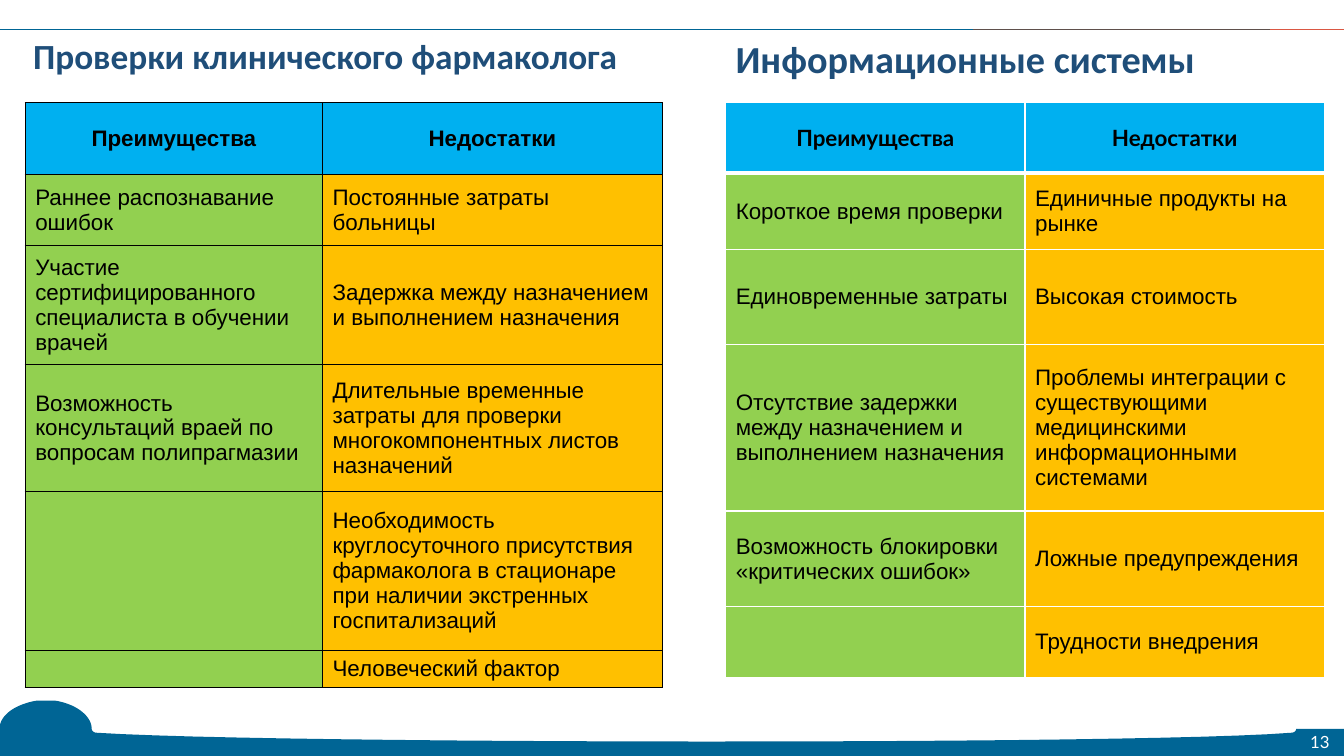
from dataclasses import dataclass

import pptx
import pptx.dml.color
import pptx.enum.shapes
import pptx.enum.text
import pptx.oxml.ns
import pptx.util
from lxml import etree

Pt = pptx.util.Pt
ALIGN = pptx.enum.text.PP_ALIGN
MIDDLE = pptx.enum.text.MSO_ANCHOR.MIDDLE
qn = pptx.oxml.ns.qn


@dataclass(frozen=True)
class Theme:
    """Colours, fonts and type sizes of the slide."""
    wave: str = "006595"
    rule_brown: str = "5F504C"
    rule_red: str = "DA5743"
    title: str = "1F4E79"
    header: str = "00B0F0"
    benefit: str = "92D050"
    drawback: str = "FFC000"
    black: str = "000000"
    white: str = "FFFFFF"
    title_font: str = "Calibri"
    body_font: str = "Arial"
    accent_font: str = "Lato"
    left_title_size: float = 25.2
    right_title_size: float = 27.3
    cell_size: float = 16
    number_size: float = 12


THEME = Theme()
PAGE_WIDTH, PAGE_HEIGHT = 960, 540
RULE_TOP = 21
TABLE_TOP = 73.4

PHARMACOLOGIST_ROWS = [
    (51.1, "Преимущества", "Недостатки"),
    (51.1, "Раннее распознавание ошибок", "Постоянные затраты больницы"),
    (85, "Участие сертифицированного специалиста в обучении врачей",
     "Задержка между назначением и выполнением назначения"),
    (90.7, "Возможность консультаций враей по вопросам полипрагмазии",
     "Длительные временные затраты для проверки многокомпонентных листов назначений"),
    (113.2, "", "Необходимость круглосуточного присутствия фармаколога в стационаре "
     "при наличии экстренных госпитализаций"),
    (25.2, "", "Человеческий фактор"),
]
SYSTEM_ROWS = [
    (50.4, "Преимущества", "Недостатки"),
    (54.7, "Короткое время проверки", "Единичные продукты на рынке"),
    (67.7, "Единовременные затраты", "Высокая стоимость"),
    (118.8, "Отсутствие задержки между назначением и выполнением назначения",
     "Проблемы интеграции с существующими медицинскими информационными системами"),
    (68.4, "Возможность блокировки «критических ошибок»", "Ложные предупреждения"),
    (50.4, "", "Трудности внедрения"),
]


def rgb(code):
    """Turn a hex code into a colour."""
    return pptx.dml.color.RGBColor.from_string(code)


def style_font(para, name, size, color, bold=False):
    """Set the font of a whole paragraph."""
    font = para.font
    font.name, font.size, font.bold = name, Pt(size), bold
    font.color.rgb = rgb(color)


def add_text(page, text, area, font, size, color, bold=False):
    """Add a one-line text box and return it."""
    box = page.shapes.add_textbox(*map(Pt, area))
    frame = box.text_frame
    frame.word_wrap, frame.vertical_anchor = True, MIDDLE
    frame.text = text
    style_font(frame.paragraphs[0], font, size, color, bold)
    return box


def add_title(page, text, left, top, size):
    """Add the heading of one half of the slide."""
    box = add_text(page, text, (left, top, 446.4, 38.2), THEME.title_font, size, THEME.title, True)
    box.text_frame.paragraphs[0].line_spacing = 0.9


def add_page_number(page, number):
    """Add the page number in the lower right corner."""
    box = add_text(page, number, (930.2, 520.6, 25.2, 18.7),
                   THEME.accent_font, THEME.number_size, THEME.white)
    frame = box.text_frame
    frame.margin_left = frame.margin_right = frame.margin_top = frame.margin_bottom = 0
    frame.paragraphs[0].alignment = ALIGN.CENTER


def add_rule(page, start, end, color):
    """Add one stretch of the line along the top."""
    rule = page.shapes.add_connector(pptx.enum.shapes.MSO_CONNECTOR.STRAIGHT,
                                     Pt(start), Pt(RULE_TOP), Pt(end), Pt(RULE_TOP))
    rule.line.color.rgb = rgb(color)
    rule.line.width = Pt(1)
    etree.SubElement(rule._element.spPr, qn("a:effectLst"))


def curve(start, first, second, end, steps=24):
    """Sample a cubic curve after its start point."""
    points = []
    for step in range(1, steps + 1):
        t = step / steps
        weights = ((1 - t) ** 3, 3 * t * (1 - t) ** 2, 3 * t * t * (1 - t), t ** 3)
        points.append(tuple(sum(weight * point[axis] for weight, point
                                in zip(weights, (start, first, second, end))) for axis in (0, 1)))
    return points


def add_wave(page):
    """Add the blue wave along the bottom edge."""
    points = [(38.9, 500.4)]
    for bend in (
        ((54, 502.6), (65.5, 511.2), (65.5, 520.6)),
        ((65.5, 522), (67, 523.4), (69.1, 523.4)),
        ((193, 531.4), (811.4, 532.1), (922.3, 523.4)),
        ((924.5, 523.4), (925.9, 522), (925.9, 520.6)),
    ):
        points += curve(points[-1], *bend)
    points += [(PAGE_WIDTH, 520.6), (PAGE_WIDTH, PAGE_HEIGHT), (0, PAGE_HEIGHT), (0, 517.7)]
    points += curve(points[-1], (2.2, 509), (13, 502.6), (26.6, 500.4))
    outline = [(Pt(x), Pt(y)) for x, y in points]
    builder = page.shapes.build_freeform(*outline[0], scale=1.0)
    builder.add_line_segments(outline[1:], close=True)
    wave = builder.convert_to_shape()
    wave.shadow.inherit = False
    wave.fill.solid()
    wave.fill.fore_color.rgb = rgb(THEME.wave)
    wave.line.fill.background()


def set_borders(cell, color, widths):
    """Draw the left, right, top and bottom borders of a cell."""
    properties = cell._tc.get_or_add_tcPr()
    for index, (side, width) in enumerate(zip("LRTB", widths)):
        line = etree.Element(qn(f"a:ln{side}"), w=str(Pt(width)))
        fill = etree.SubElement(line, qn("a:solidFill"))
        etree.SubElement(fill, qn("a:srgbClr"), val=color)
        properties.insert(index, line)


def fill_cell(cell, text, color, font, is_header):
    """Write and colour one table cell."""
    cell.fill.solid()
    cell.fill.fore_color.rgb = rgb(color)
    cell.vertical_anchor = MIDDLE
    para = cell.text_frame.paragraphs[0]
    if text:
        para.add_run().text = text
    para.alignment = ALIGN.CENTER if is_header else ALIGN.LEFT
    style_font(para, font, THEME.cell_size, THEME.black, is_header)
    if not text:
        etree.SubElement(para._p, qn("a:endParaRPr"), sz=str(int(THEME.cell_size * 100)))


def add_comparison(page, left, widths, rows, border, header_font, header_rule):
    """Add a table of benefits and drawbacks."""
    heights = [row[0] for row in rows]
    table = page.shapes.add_table(len(rows), len(widths), Pt(left), Pt(TABLE_TOP),
                                  Pt(sum(widths)), Pt(sum(heights))).table
    table.first_row = table.horz_banding = False
    for column, width in zip(table.columns, widths):
        column.width = Pt(width)
    for index, (height, *texts) in enumerate(rows):
        table.rows[index].height = Pt(height)
        is_header = index == 0
        colors = (THEME.header,) * 2 if is_header else (THEME.benefit, THEME.drawback)
        font = header_font if is_header else THEME.body_font
        top = header_rule if index == 1 else 1
        bottom = header_rule if is_header else 1
        for place, (text, color) in enumerate(zip(texts, colors)):
            cell = table.cell(index, place)
            fill_cell(cell, text, color, font, is_header)
            set_borders(cell, border, (1, 1, top, bottom))


def main():
    """Build the slide and save it."""
    deck = pptx.Presentation()
    deck.slide_width, deck.slide_height = Pt(PAGE_WIDTH), Pt(PAGE_HEIGHT)
    page = deck.slides.add_slide(deck.slide_layouts[6])
    add_wave(page)
    add_rule(page, 0, 694.8, THEME.wave)
    add_rule(page, 694.8, 907.2, THEME.rule_brown)
    add_rule(page, 907.2, PAGE_WIDTH, THEME.rule_red)
    add_page_number(page, "13")
    add_title(page, "Проверки клинического фармаколога", 16.6, 22.3, THEME.left_title_size)
    add_comparison(page, 18, (212.4, 242.6), PHARMACOLOGIST_ROWS, THEME.black, THEME.body_font, 1)
    add_comparison(page, 518.4, (213.8, 213.8), SYSTEM_ROWS, THEME.white, THEME.accent_font, 3)
    add_title(page, "Информационные системы", 518.4, 24.5, THEME.right_title_size)
    deck.save("out.pptx")


if __name__ == "__main__":
    main()
